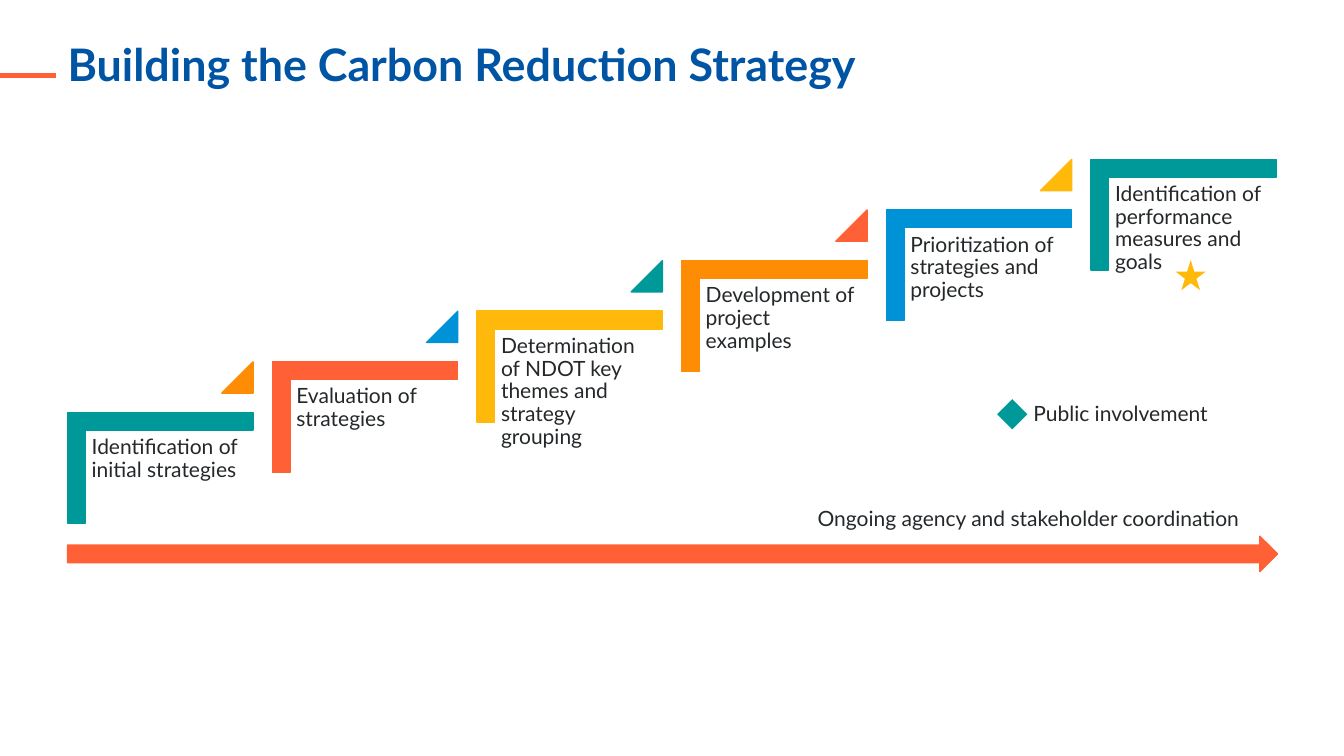
import pptx
import pptx.util
import pptx.dml.color
import pptx.enum.shapes
import pptx.enum.text
import pptx.oxml.ns
import lxml.etree

Inches = pptx.util.Inches
Pt = pptx.util.Pt
RGBColor = pptx.dml.color.RGBColor
MSO_SHAPE = pptx.enum.shapes.MSO_SHAPE
MSO_ANCHOR = pptx.enum.text.MSO_ANCHOR
PP_ALIGN = pptx.enum.text.PP_ALIGN

TEAL = RGBColor(0x00, 0x99, 0x99)
CORAL = RGBColor(0xFF, 0x60, 0x36)
YELLOW = RGBColor(0xFF, 0xB9, 0x0B)
ORANGE = RGBColor(0xFF, 0x8C, 0x05)
BLUE = RGBColor(0x00, 0x92, 0xD7)
NAVY = RGBColor(0x00, 0x54, 0xA4)
INK = RGBColor(0x25, 0x28, 0x2A)

STEPS = [
    ("Identification of initial strategies", TEAL, ORANGE),
    ("Evaluation of strategies", CORAL, BLUE),
    ("Determination of NDOT key themes and strategy grouping", YELLOW, TEAL),
    ("Development of project examples", ORANGE, CORAL),
    ("Prioritization of strategies and projects", BLUE, YELLOW),
    ("Identification of performance measures and goals", TEAL, None),
]
STEP_RUN = 2.03
STEP_RISE = 0.502


def write_text(tf, text, size=15, color=INK, bold=False, inset=0.06):
    """Fill a text frame with one formatted, top-left paragraph."""
    tf.word_wrap = True
    tf.auto_size = pptx.enum.text.MSO_AUTO_SIZE.NONE
    tf.vertical_anchor = MSO_ANCHOR.TOP
    tf.margin_left = tf.margin_right = Inches(inset)
    tf.margin_top = tf.margin_bottom = Inches(inset)
    p = tf.paragraphs[0]
    p.alignment = PP_ALIGN.LEFT
    p.line_spacing = 0.9
    r = p.add_run()
    r.text = text
    r.font.name = "Lato"
    r.font.size = Pt(size)
    r.font.bold = bold
    r.font.color.rgb = color


def add_title(slide, text):
    """Place and format the title placeholder."""
    sp = slide.shapes.title
    sp.left, sp.top = Inches(0.67), Inches(0.42)
    sp.width, sp.height = Inches(12), Inches(0.92)
    write_text(sp.text_frame, text, size=32, color=NAVY, bold=True, inset=0)


def add_label(slide, text, left, top, width, height):
    """Add a wrapped text box."""
    sp = slide.shapes.add_textbox(Inches(left), Inches(top), Inches(width), Inches(height))
    write_text(sp.text_frame, text)


def add_solid(slide, kind, color, left, top, width, height, adjustments=(), rotation=0, outlined=True):
    """Add a flat preset shape in one colour."""
    sp = slide.shapes.add_shape(kind, Inches(left), Inches(top), Inches(width), Inches(height))
    sp.shadow.inherit = False
    sp.rotation = rotation
    for i, value in enumerate(adjustments):
        sp.adjustments[i] = value
    sp.fill.solid()
    sp.fill.fore_color.rgb = color
    if outlined:
        sp.line.color.rgb = color
        sp.line.width = Pt(1)
    else:
        sp.line.fill.background()


def add_rule(slide, x1, x2, y, color, width):
    """Add a horizontal line without a shadow."""
    line = slide.shapes.add_connector(
        pptx.enum.shapes.MSO_CONNECTOR.STRAIGHT, Inches(x1), Inches(y), Inches(x2), Inches(y))
    line.line.color.rgb = color
    line.line.width = Pt(width)
    lxml.etree.SubElement(line._element.spPr, pptx.oxml.ns.qn("a:effectLst"))


def add_step(slide, index, text, color, triangle_color):
    """Add one stair: corner bracket, label and optional triangle."""
    dx, dy = index * STEP_RUN, index * STEP_RISE
    add_solid(slide, MSO_SHAPE.CORNER, color, 1.04 + dx, 3.72 - dy, 1.1, 1.84,
              adjustments=(0.161, 0.161), rotation=90)
    add_label(slide, text, 0.85 + dx, 4.27 - dy, 1.66, 1.45)
    if triangle_color is not None:
        add_solid(slide, MSO_SHAPE.ISOSCELES_TRIANGLE, triangle_color,
                  2.2 + dx, 3.59 - dy, 0.31, 0.31, adjustments=(1,))


def main():
    """Build the slide and save it."""
    prs = pptx.Presentation()
    prs.slide_width, prs.slide_height = Inches(13.33), Inches(7.5)
    slide = prs.slides.add_slide(prs.slide_layouts[5])
    add_rule(slide, 0.56, 0, 0.75, CORAL, 3.5)
    add_title(slide, "Building the Carbon Reduction Strategy")
    for index, step in enumerate(STEPS):
        add_step(slide, index, *step)
    add_solid(slide, MSO_SHAPE.RIGHT_ARROW, CORAL, 0.67, 5.32, 12, 0.35)
    add_label(slide, "Ongoing agency and stakeholder coordination", 8.05, 4.98, 4.54, 0.63)
    add_label(slide, "Public involvement", 10.19, 3.94, 2.14, 0.63)
    add_solid(slide, MSO_SHAPE.DIAMOND, TEAL, 9.89, 3.96, 0.3, 0.3, outlined=False)
    add_solid(slide, MSO_SHAPE.STAR_5_POINT, YELLOW, 11.66, 2.58, 0.3, 0.3, outlined=False)
    prs.save("out.pptx")


if __name__ == "__main__":
    main()
